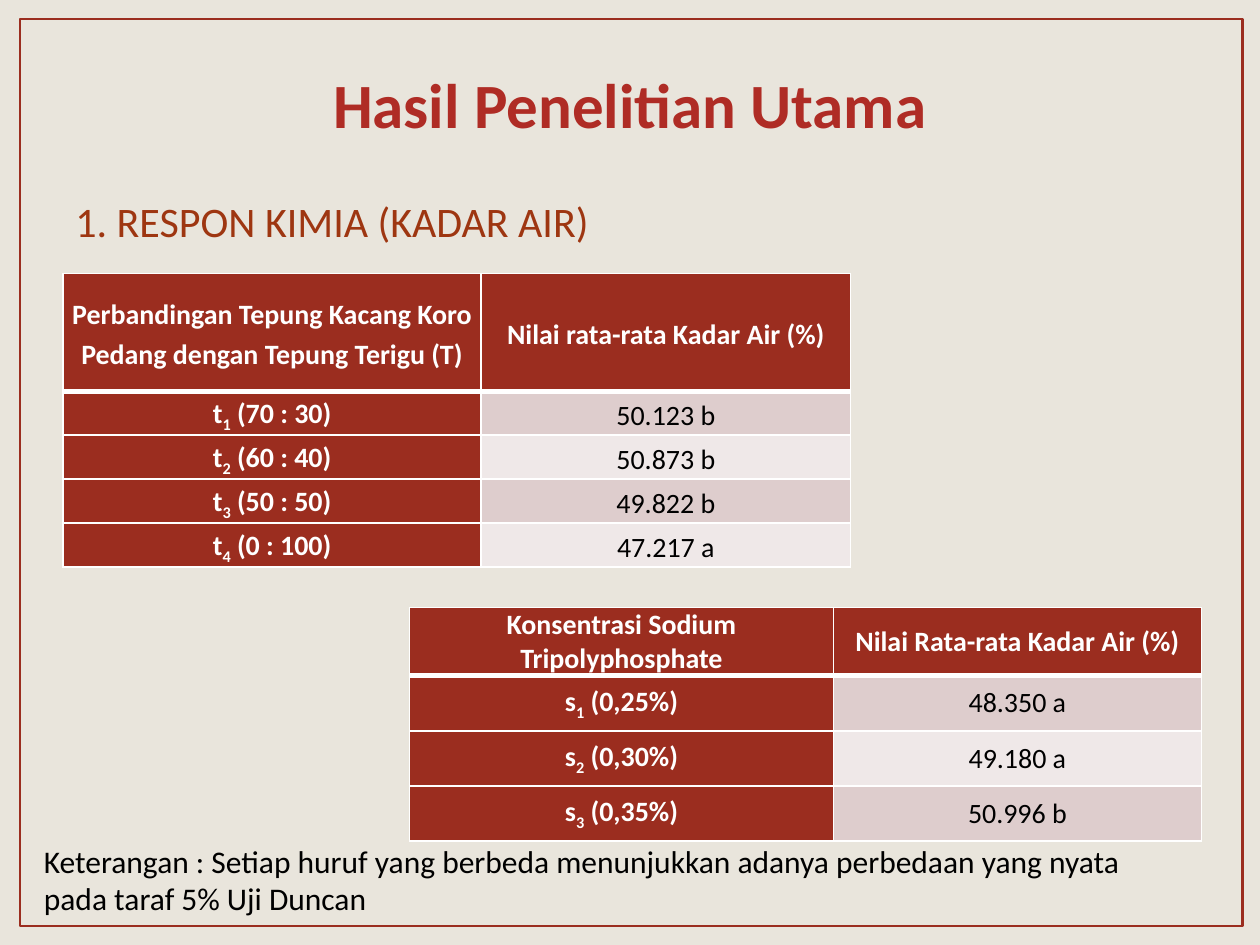
from lxml import etree
from pptx import Presentation
from pptx.dml.color import RGBColor
from pptx.enum.shapes import MSO_SHAPE
from pptx.enum.text import MSO_ANCHOR, MSO_AUTO_SIZE, PP_ALIGN
from pptx.oxml.ns import qn
from pptx.util import Pt

RECTANGLE = MSO_SHAPE.RECTANGLE
MIDDLE, BOTTOM = MSO_ANCHOR.MIDDLE, MSO_ANCHOR.BOTTOM
CENTER = PP_ALIGN.CENTER
NO_AUTOFIT = MSO_AUTO_SIZE.NONE
TITLE_ONLY = 5

FONT = "Calibri"
BRICK, WHITE, BLACK = "9B2D1F", "FFFFFF", "000000"
BANDS = ["DECDCD", "EFE8E8"]


def style_run(run, size, color, bold=False):
    run.font.name = FONT
    run.font.size = Pt(size)
    run.font.bold = bold
    run.font.color.rgb = RGBColor.from_string(color)


def add_border(cell, side, width):
    """Add one white cell edge; call in the order L, R, T, B and before the fill."""
    line = etree.SubElement(cell._tc.get_or_add_tcPr(), qn(f"a:ln{side}"), w=str(Pt(width)))
    fill = etree.SubElement(line, qn("a:solidFill"))
    etree.SubElement(fill, qn("a:srgbClr"), val=WHITE)


presentation = Presentation()
presentation.slide_width, presentation.slide_height = Pt(720), Pt(540)
slide = presentation.slides.add_slide(presentation.slide_layouts[TITLE_ONLY])
slide.background.fill.solid()
slide.background.fill.fore_color.rgb = RGBColor.from_string("E9E5DC")

frame = slide.shapes.add_shape(RECTANGLE, Pt(11.5), Pt(10.8), Pt(698.4), Pt(518.4))
frame.shadow.inherit = False
frame.fill.background()
frame.line.color.rgb = RGBColor.from_string(BRICK)
frame.line.width = Pt(1.5)

title = slide.shapes.title
title.left, title.top, title.width, title.height = Pt(36), Pt(21.6), Pt(648), Pt(62.6)
title.text_frame.text = "Hasil Penelitian Utama"
title.text_frame.auto_size = NO_AUTOFIT
title.text_frame.vertical_anchor = BOTTOM
title.text_frame.paragraphs[0].alignment = CENTER
style_run(title.text_frame.paragraphs[0].runs[0], 36, "AF2C25", bold=True)

# Text, box, size, colour
texts = [
    ("1. RESPON KIMIA (KADAR AIR)", (36, 108, 648, 356.4), 24, "9E3611"),
    ("Keterangan : Setiap huruf yang berbeda menunjukkan adanya perbedaan "
     "yang nyata pada taraf 5% Uji Duncan", (18, 477.4, 666, 51), 18, BLACK),
]
for text, box, size, color in texts:
    text_box = slide.shapes.add_textbox(*map(Pt, box))
    text_box.text_frame.word_wrap = True
    text_box.text_frame.text = text
    style_run(text_box.text_frame.paragraphs[0].runs[0], size, color)

# Row labels are (letter, level); the row number becomes the subscript
tables = [
    {"position": (36, 156.2), "columns": (239, 211), "header_height": 67.4,
     "row_height": 25, "line_spacing": 1.15, "letter": "t",
     "headers": ("Perbandingan Tepung Kacang Koro Pedang dengan Tepung Terigu (T)",
                 "Nilai rata-rata Kadar Air (%)"),
     "rows": [("70 : 30", "50.123 b"), ("60 : 40", "50.873 b"),
              ("50 : 50", "49.822 b"), ("0 : 100", "47.217 a")]},
    {"position": (234, 347.2), "columns": (242.3, 210.2), "header_height": 39,
     "row_height": 31.5, "line_spacing": 1.0, "letter": "s",
     "headers": ("Konsentrasi Sodium Tripolyphosphate",
                 "Nilai Rata-rata Kadar Air (%)"),
     "rows": [("0,25%", "48.350 a"), ("0,30%", "49.180 a"), ("0,35%", "50.996 b")]},
]
for data in tables:
    heights = [data["header_height"]] + [data["row_height"]] * len(data["rows"])
    left, top = data["position"]
    table = slide.shapes.add_table(
        len(heights), 2, Pt(left), Pt(top), Pt(sum(data["columns"])), Pt(sum(heights))).table
    for column, width in zip(table.columns, data["columns"]):
        column.width = Pt(width)
    for row, height in zip(table.rows, heights):
        row.height = Pt(height)

    for row_index, values in enumerate([data["headers"]] + data["rows"]):
        for column_index, value in enumerate(values):
            is_header = row_index == 0
            is_label = column_index == 0 and not is_header
            is_value = column_index == 1 and not is_header
            cell = table.cell(row_index, column_index)
            for side in "LRTB":
                thick = (is_header and side == "B") or (row_index == 1 and side == "T")
                add_border(cell, side, 3 if thick else 1)
            cell.fill.solid()
            cell.fill.fore_color.rgb = RGBColor.from_string(
                BANDS[(row_index - 1) % 2] if is_value else BRICK)
            cell.vertical_anchor = MIDDLE
            cell.margin_left = cell.margin_right = Pt(5)
            cell.margin_top = cell.margin_bottom = 0

            paragraph = cell.text_frame.paragraphs[0]
            paragraph.alignment = CENTER
            paragraph.line_spacing = data["line_spacing"]
            parts = [data["letter"], str(row_index), f" ({value})"] if is_label else [value]
            for part_index, part in enumerate(parts):
                run = paragraph.add_run()
                run.text = part
                style_run(run, 16, BLACK if is_value else WHITE, bold=not is_value)
                if part_index == 1:
                    run._r.get_or_add_rPr().set("baseline", "-25000")

presentation.save("out.pptx")
